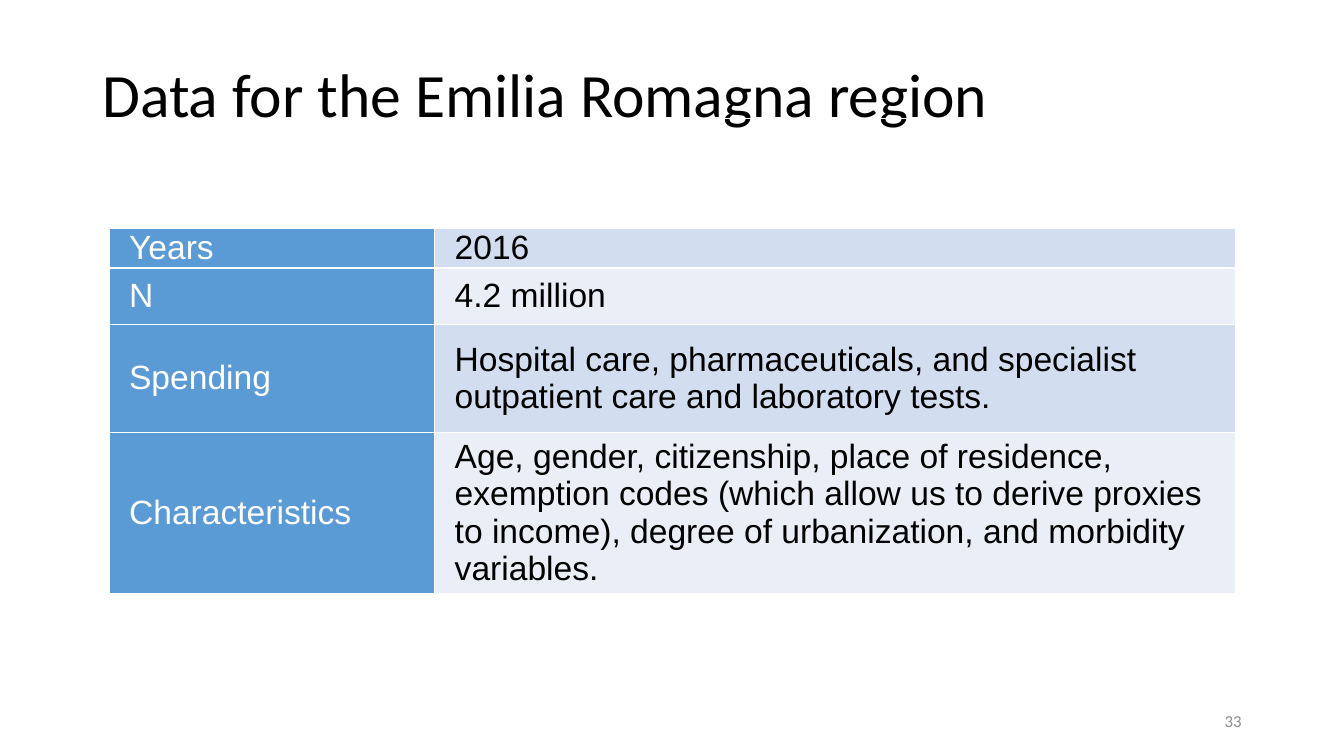
import pptx
import pptx.dml.color
import pptx.enum.text
import pptx.oxml
import pptx.util
from dataclasses import dataclass

Pt = pptx.util.Pt
Anchor = pptx.enum.text.MSO_ANCHOR
Align = pptx.enum.text.PP_ALIGN
NS = "http://schemas.openxmlformats.org/drawingml/2006/main"


@dataclass(frozen=True)
class Theme:
    head: str = "Calibri"
    body: str = "Arial"
    black: str = "000000"
    white: str = "FFFFFF"
    grey: str = "8C8C8C"
    label: str = "5B9BD5"
    bands: tuple = ("D2DEEF", "EAEFF7")
    title: int = 44
    text: int = 24
    small: int = 12


def rgb(code):
    return pptx.dml.color.RGBColor.from_string(code)


class Deck:
    def __init__(self, theme):
        self.theme = theme
        self.show = pptx.Presentation()
        self.show.slide_width, self.show.slide_height = Pt(960), Pt(540)
        self.slide = self.show.slides.add_slide(self.show.slide_layouts[6])

    def style(self, frame, font, size, color):
        for para in frame.paragraphs:
            for run in para.runs:
                run.font.name, run.font.size = font, Pt(size)
                run.font.bold = False
                run.font.color.rgb = rgb(color)

    def text(self, words, box, size, color, align=Align.LEFT, space=1.0):
        frame = self.slide.shapes.add_textbox(*map(Pt, box)).text_frame
        frame.word_wrap = True
        frame.vertical_anchor = Anchor.MIDDLE
        frame.text = words
        para = frame.paragraphs[0]
        para.alignment, para.line_spacing = align, space
        self.style(frame, self.theme.head, size, color)

    def border(self, cell, **sides):
        """Draw the cell's edges in white, 1 pt unless a side gives its width."""
        props = cell._tc.get_or_add_tcPr()
        for spot, side in enumerate("LRTB"):
            width = Pt(sides.get(side, 1))
            props.insert(spot, pptx.oxml.parse_xml(
                f'<a:ln{side} xmlns:a="{NS}" w="{width}"><a:solidFill>'
                f'<a:srgbClr val="{self.theme.white}"/></a:solidFill></a:ln{side}>'))

    def cell(self, cell, words, fill, color):
        cell.text = words
        cell.vertical_anchor = Anchor.MIDDLE
        cell.margin_left, cell.margin_right = Pt(14.4), Pt(4.3)
        cell.margin_top = cell.margin_bottom = 0
        cell.fill.solid()
        cell.fill.fore_color.rgb = rgb(fill)
        self.style(cell.text_frame, self.theme.body, self.theme.text, color)

    def table(self, rows, left, top, widths, heights):
        """Fill a table of label and value rows below an empty top row."""
        theme = self.theme
        table = self.slide.shapes.add_table(
            len(heights), len(widths), Pt(left), Pt(top),
            Pt(sum(widths)), Pt(sum(heights))).table
        table.first_row = table.horz_banding = False
        for col, width in zip(table.columns, widths):
            col.width = Pt(width)
        for row, height in zip(table.rows, heights):
            row.height = Pt(height)
        for cell in table.rows[0].cells:
            cell.fill.background()
            self.border(cell, B=3)
        for num, (label, value) in enumerate(rows, 1):
            name, data = table.rows[num].cells
            self.cell(name, label, theme.label, theme.white)
            self.cell(data, value, theme.bands[(num - 1) % 2], theme.black)
            for cell in (name, data):
                self.border(cell, T=3 if num == 1 else 1)


def main():
    theme = Theme()
    deck = Deck(theme)
    deck.text("Data for the Emilia Romagna region", (66, 17.3, 828, 104.4),
              theme.title, theme.black, space=0.9)
    deck.text("33", (678, 500.5, 216, 28.8), theme.small, theme.grey, Align.RIGHT)
    rows = [
        ("Years", "2016"),
        ("N", "4.2 million"),
        ("Spending", "Hospital care, pharmaceuticals, and specialist "
                     "outpatient care and laboratory tests."),
        ("Characteristics", "Age, gender, citizenship, place of residence, "
                            "exemption codes (which allow us to derive proxies "
                            "to income), degree of urbanization, and morbidity "
                            "variables."),
    ]
    deck.table(rows, 77.8, 84.6, (232.6, 572.4), (78, 28, 40.3, 77, 77))
    deck.show.save("out.pptx")


if __name__ == "__main__":
    main()
